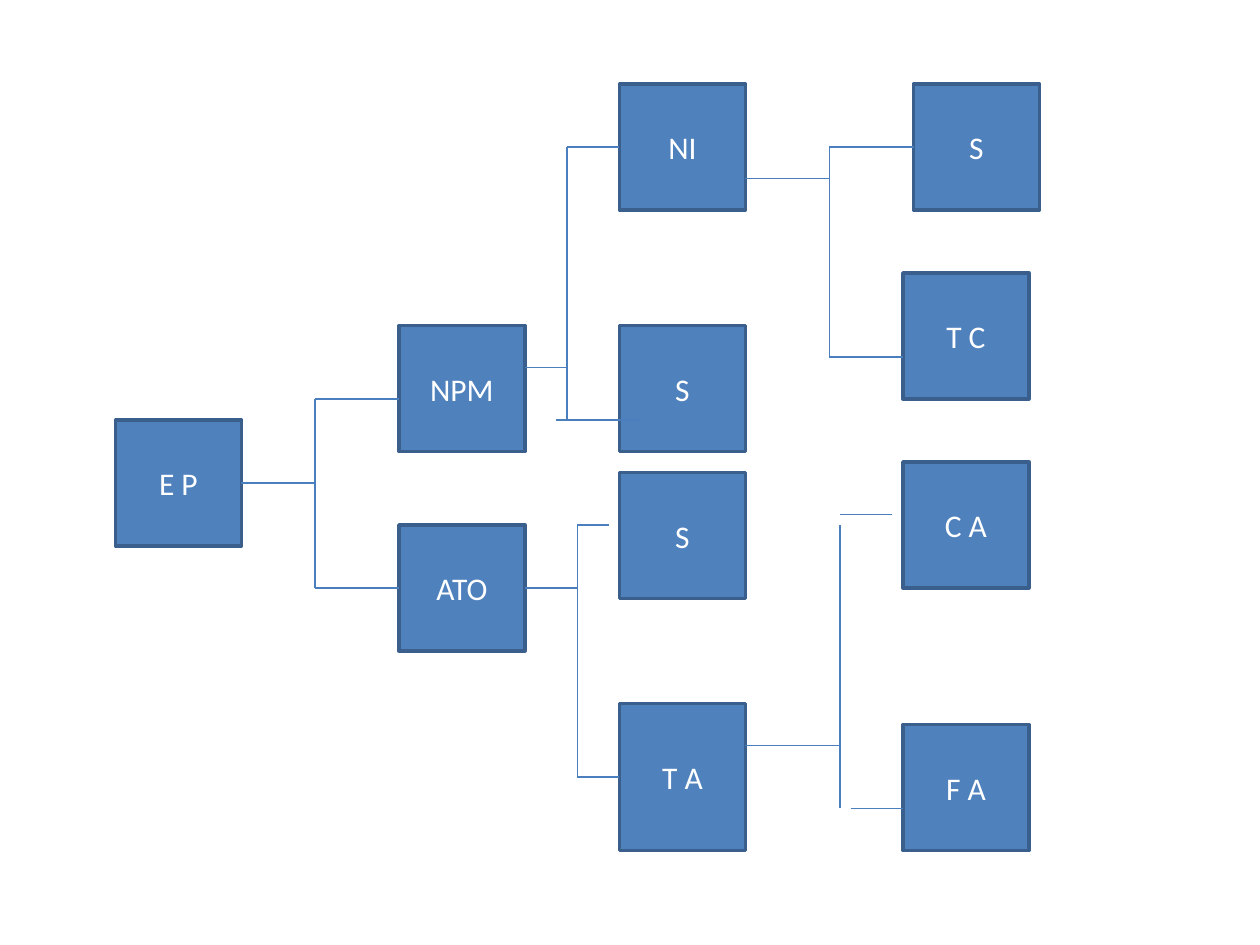
from collections import namedtuple
from dataclasses import dataclass

from pptx import Presentation
from pptx.dml.color import RGBColor
from pptx.enum.shapes import MSO_CONNECTOR, MSO_SHAPE
from pptx.enum.text import MSO_ANCHOR, PP_ALIGN
from pptx.oxml.ns import qn
from pptx.util import Inches, Pt
from lxml.etree import SubElement

Box = namedtuple("Box", "left top width height")
Node = namedtuple("Node", "label column row height", defaults=[12])
Bracket = namedtuple("Bracket", "column top bottom arms")
COLUMNS, ROWS, NODE_WIDTH = 120, 90, 12


@dataclass(frozen=True)
class Theme:
    """Colours and type of the diagram."""
    fill: RGBColor = RGBColor.from_string("4F81BD")
    border: RGBColor = RGBColor.from_string("3A5F8C")
    link: RGBColor = RGBColor.from_string("4B7EBC")
    text: RGBColor = RGBColor.from_string("FFFFFF")
    font: str = "Calibri"
    size: Pt = Pt(18)
    border_width: Pt = Pt(2)
    link_width: Pt = Pt(0.75)


THEME = Theme()

NODES = [
    Node("E P", 11, 40),
    Node("NPM", 38, 31),
    Node("ATO", 38, 50),
    Node("S", 59, 31),
    Node("NI", 59, 8),
    Node("S", 59, 45),
    Node("T A", 59, 67, 14),
    Node("S", 87, 8),
    Node("T C", 86, 26),
    Node("C A", 86, 44),
    Node("F A", 86, 69),
]

BRACKETS = [
    Bracket(30, 38, 56, [(23, 30, 46), (30, 38, 38), (30, 38, 56)]),
    Bracket(54, 14, 40, [(50, 54, 35), (54, 59, 14), (53, 61, 40)]),
    Bracket(55, 50, 74, [(50, 55, 56), (55, 58, 50), (55, 59, 74)]),
    Bracket(79, 14, 34, [(71, 79, 17), (79, 87, 14), (79, 86, 34)]),
    Bracket(80, 50, 77, [(71, 80, 71), (80, 85, 49), (81, 86, 77)]),
]


def set_values(target, values):
    """Set each named attribute of the target."""
    for name, value in values.items():
        setattr(target, name, value)


def place(box, column, row):
    """Turn a grid column and row into a point inside the box."""
    return (round(box.left + box.width * column / COLUMNS),
            round(box.top + box.height * row / ROWS))


def add_node(slide, box, node):
    """Draw one labelled square of the tree."""
    left, top = place(box, node.column, node.row)
    right, bottom = place(box, node.column + NODE_WIDTH, node.row + node.height)
    shape = slide.shapes.add_shape(
        MSO_SHAPE.RECTANGLE, left, top, right - left, bottom - top)
    shape.shadow.inherit = False
    shape.fill.solid()
    shape.fill.fore_color.rgb = THEME.fill
    shape.line.color.rgb = THEME.border
    shape.line.width = THEME.border_width
    set_values(shape.text_frame,
               {"word_wrap": True, "vertical_anchor": MSO_ANCHOR.MIDDLE})
    paragraph = shape.text_frame.paragraphs[0]
    set_values(paragraph, {"text": node.label, "alignment": PP_ALIGN.CENTER})
    set_values(paragraph.font, {"name": THEME.font, "size": THEME.size})
    paragraph.font.color.rgb = THEME.text


def add_link(slide, box, start, end):
    """Draw a thin line between two grid points."""
    connector = slide.shapes.add_connector(
        MSO_CONNECTOR.STRAIGHT, *place(box, *start), *place(box, *end))
    connector.line.color.rgb = THEME.link
    connector.line.width = THEME.link_width
    SubElement(connector._element.spPr, qn("a:effectLst"))


def add_bracket(slide, box, bracket):
    """Draw a vertical spine and its horizontal arms."""
    add_link(slide, box, (bracket.column, bracket.top),
             (bracket.column, bracket.bottom))
    for start, end, row in bracket.arms:
        add_link(slide, box, (start, row), (end, row))


def add_tree(slide, box):
    """Draw the whole tree inside the box."""
    for node in NODES:
        add_node(slide, box, node)
    for bracket in BRACKETS:
        add_bracket(slide, box, bracket)


def main():
    """Build and save the presentation."""
    presentation = Presentation()
    set_values(presentation,
               {"slide_width": Inches(10), "slide_height": Inches(7.5)})
    slide = presentation.slides.add_slide(presentation.slide_layouts[6])
    add_tree(slide, Box(0, 0, presentation.slide_width,
                        presentation.slide_height))
    presentation.save("out.pptx")


if __name__ == "__main__":
    main()
